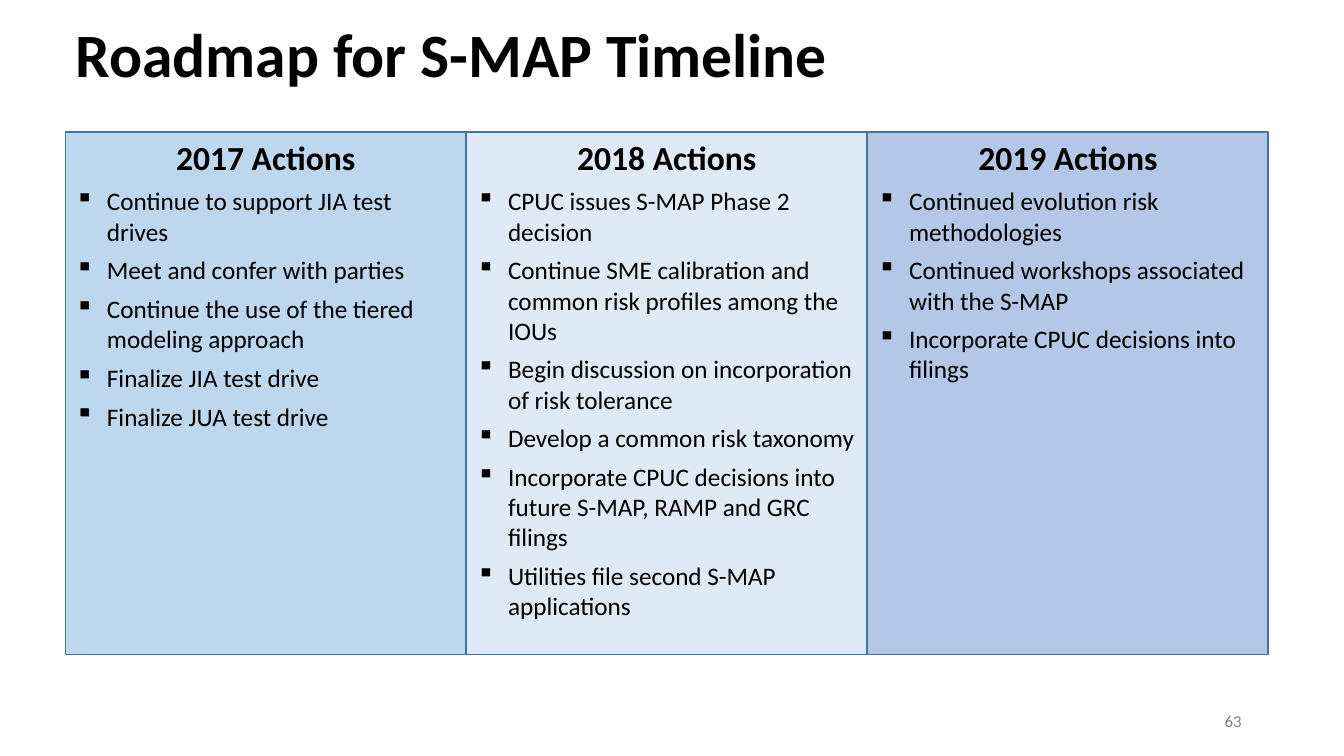
from lxml.etree import SubElement
from pptx import Presentation
from pptx.dml.color import RGBColor
from pptx.enum.shapes import MSO_SHAPE
from pptx.enum.text import MSO_ANCHOR, MSO_AUTO_SIZE, PP_ALIGN
from pptx.oxml.ns import qn
from pptx.util import Pt

FONT = "Calibri"
BLACK = RGBColor(0x00, 0x00, 0x00)
GREY = RGBColor(0x80, 0x80, 0x80)
BORDER = RGBColor(0x43, 0x73, 0x9E)
SKY = RGBColor(0xBD, 0xD7, 0xEE)
PALE = RGBColor(0xDE, 0xEB, 0xF7)
PERIWINKLE = RGBColor(0xB4, 0xC7, 0xE7)

MARGIN = 46.8
YEAR_PITCH = 286.5
YEAR_WIDTH = 286
BULLET_INDENT = Pt(22.5)

ROADMAP = [
    ("2017 Actions", SKY, [
        "Continue to support JIA test drives",
        "Meet and confer with parties",
        "Continue the use of the tiered modeling approach",
        "Finalize JIA test drive",
        "Finalize JUA test drive",
    ]),
    ("2018 Actions", PALE, [
        "CPUC issues S-MAP Phase 2 decision",
        "Continue SME calibration and common risk profiles among the IOUs",
        "Begin discussion on incorporation of risk tolerance",
        "Develop a common risk taxonomy",
        "Incorporate CPUC decisions into future S-MAP, RAMP and GRC filings",
        "Utilities file second S-MAP applications",
    ]),
    ("2019 Actions", PERIWINKLE, [
        "Continued evolution risk methodologies",
        "Continued workshops associated with the S-MAP",
        "Incorporate CPUC decisions into filings",
    ]),
]


def write(paragraph, text, size=18, bold=False, color=BLACK,
          align=PP_ALIGN.LEFT, after=0, spacing=1.0, bullet=None):
    if bullet:
        properties = paragraph._p.get_or_add_pPr()
        properties.set("marL", str(BULLET_INDENT))
        properties.set("indent", str(-BULLET_INDENT))
        SubElement(properties, qn("a:buChar"), char=bullet)
    paragraph.alignment = align
    paragraph.space_after = Pt(after)
    paragraph.line_spacing = spacing
    run = paragraph.add_run()
    run.text = text
    run.font.name = FONT
    run.font.size = Pt(size)
    run.font.bold = bold
    run.font.color.rgb = color


def set_title(slide, text):
    title = slide.shapes.title
    title.left, title.top = Pt(MARGIN), Pt(12.2)
    title.width, title.height = Pt(828), Pt(57.6)
    frame = title.text_frame
    frame.word_wrap = True
    frame.auto_size = MSO_AUTO_SIZE.NONE
    frame.vertical_anchor = MSO_ANCHOR.MIDDLE
    write(frame.paragraphs[0], text, size=44, bold=True, spacing=0.9)


def add_year(slide, left, heading, fill, actions):
    year = slide.shapes.add_shape(
        MSO_SHAPE.RECTANGLE, Pt(left), Pt(94.3), Pt(YEAR_WIDTH), Pt(373))
    year.shadow.inherit = False
    year.fill.solid()
    year.fill.fore_color.rgb = fill
    year.line.color.rgb = BORDER
    year.line.width = Pt(1)
    frame = year.text_frame
    frame.word_wrap = True
    frame.vertical_anchor = MSO_ANCHOR.TOP
    write(frame.paragraphs[0], heading, size=24, bold=True,
          align=PP_ALIGN.CENTER, after=6)
    for action in actions:
        write(frame.add_paragraph(), action, after=6, bullet="▪")


def add_page_number(slide, number):
    page = slide.shapes.add_textbox(Pt(678), Pt(500.5), Pt(216), Pt(28.8))
    frame = page.text_frame
    frame.word_wrap = True
    frame.vertical_anchor = MSO_ANCHOR.MIDDLE
    write(frame.paragraphs[0], number, size=12, color=GREY,
          align=PP_ALIGN.RIGHT)


def main():
    deck = Presentation()
    deck.slide_width, deck.slide_height = Pt(960), Pt(540)
    slide = deck.slides.add_slide(deck.slide_layouts.get_by_name("Title Only"))
    set_title(slide, "Roadmap for S-MAP Timeline")
    for column, (heading, fill, actions) in enumerate(ROADMAP):
        add_year(slide, MARGIN + column * YEAR_PITCH, heading, fill, actions)
    add_page_number(slide, "63")
    deck.save("out.pptx")


if __name__ == "__main__":
    main()
